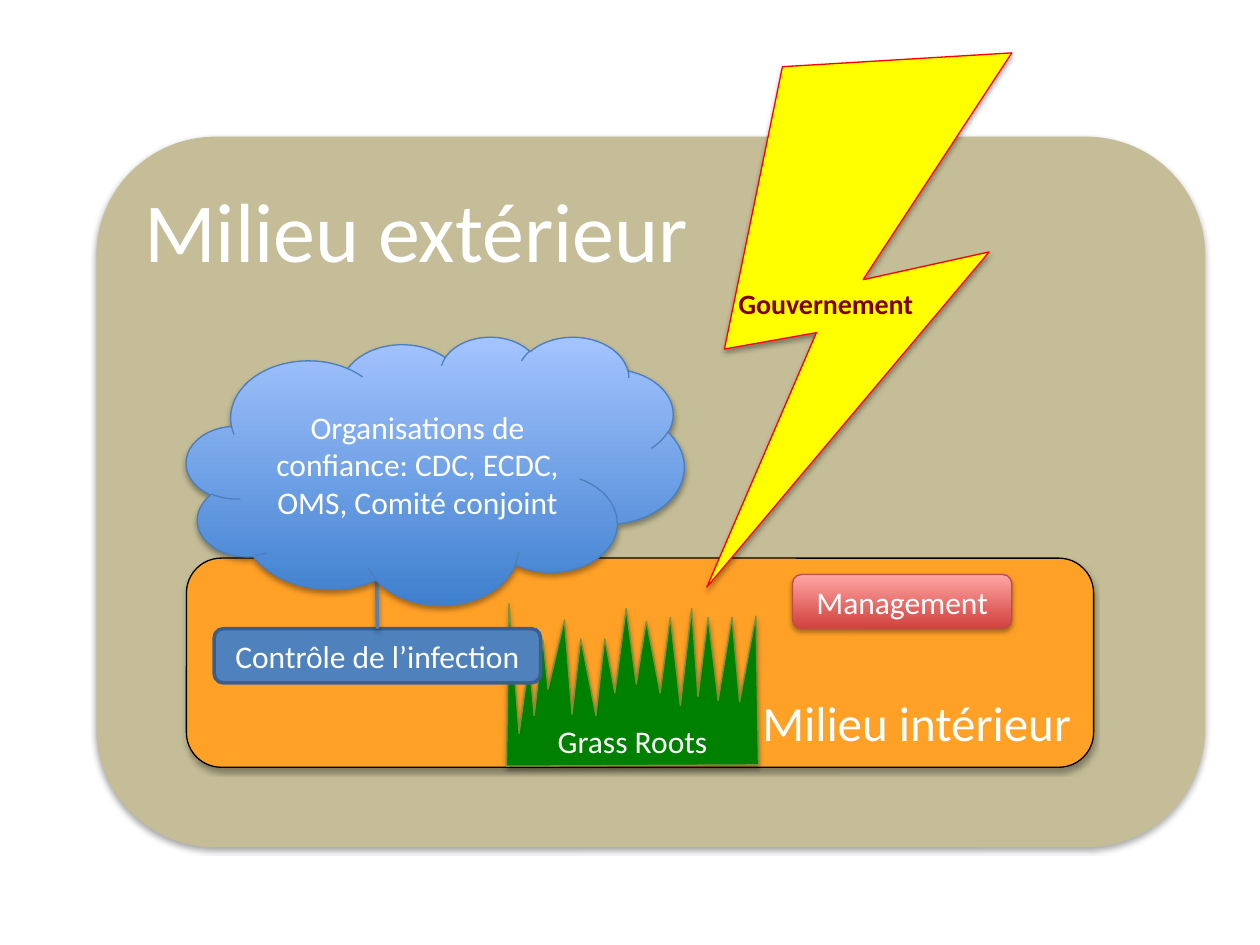
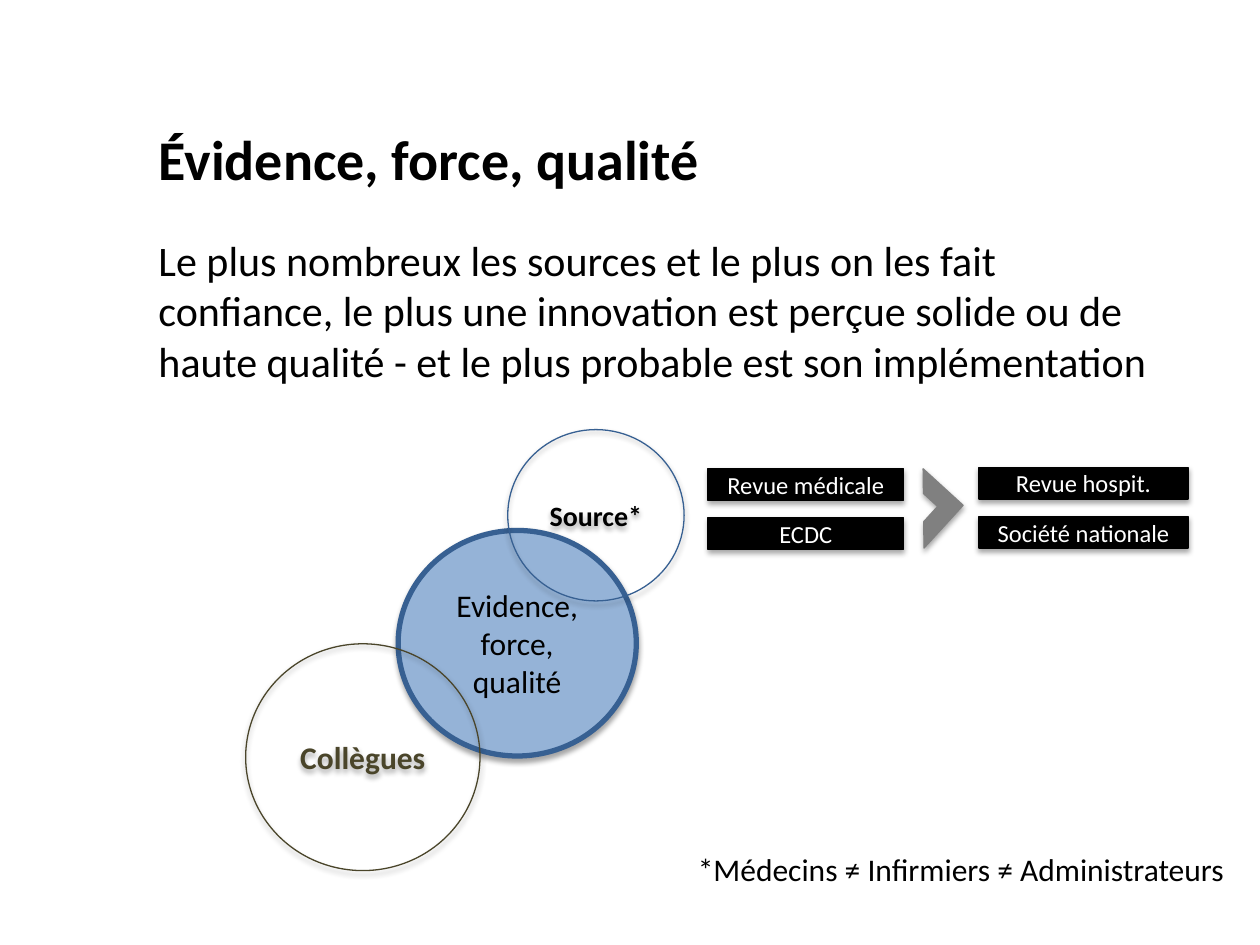
from lxml import etree
from pptx import Presentation
from pptx.dml.color import RGBColor
from pptx.enum.shapes import MSO_CONNECTOR, MSO_SHAPE
from pptx.enum.text import MSO_ANCHOR, MSO_AUTO_SIZE, PP_ALIGN
from pptx.oxml.ns import qn
from pptx.util import Inches, Pt

ROUND, RECT, CLOUD = MSO_SHAPE.ROUNDED_RECTANGLE, MSO_SHAPE.RECTANGLE, MSO_SHAPE.CLOUD
OVAL, HALF_FRAME = MSO_SHAPE.OVAL, MSO_SHAPE.HALF_FRAME
STRAIGHT = MSO_CONNECTOR.STRAIGHT
TOP, MIDDLE, BOTTOM = MSO_ANCHOR.TOP, MSO_ANCHOR.MIDDLE, MSO_ANCHOR.BOTTOM
LEFT, CENTER, RIGHT = PP_ALIGN.LEFT, PP_ALIGN.CENTER, PP_ALIGN.RIGHT
NO_AUTOSIZE = MSO_AUTO_SIZE.NONE
TITLE_ONLY, BLANK = 5, 6

COLORS = {
    "white": "FFFFFF", "black": "000000", "sand": "C4BD97", "orange": "FFA127",
    "grass": "008000", "grass_edge": "77933C", "blue": "4F81BD", "blue_edge": "3A5F8C",
    "cloud_dark": "3F80CE", "cloud_light": "A4C4FF", "cloud_edge": "4B7EBC",
    "yellow": "FFFF00", "red": "FF0000", "maroon": "800000",
    "rose_dark": "D1403C", "rose_light": "FFA6A5", "rose_edge": "BF4C48",
    "sky": "95B3D7", "navy": "376092", "olive": "4A452A", "gray": "808080",
}

GRASS = [
    (4.02, 6.08), (4.04, 4.79), (4.12, 5.82), (4.2, 5.25), (4.24, 5.68), (4.31, 5.08),
    (4.35, 5.47), (4.48, 4.92), (4.54, 5.67), (4.61, 5.07), (4.73, 5.68), (4.8, 5.07),
    (4.88, 5.5), (4.97, 4.83), (5.05, 5.43), (5.13, 4.93), (5.24, 5.5), (5.32, 4.9),
    (5.4, 5.6), (5.49, 4.83), (5.54, 5.53), (5.62, 4.9), (5.7, 5.56), (5.81, 4.9),
    (5.87, 5.57), (6, 4.89), (6.02, 6.07),
]
BOLT = [(6.21, 0.53), (8.03, 0.42), (6.85, 2.22), (7.85, 2), (5.61, 4.66),
        (6.48, 2.64), (5.75, 2.77)]


def rgb(name):
    return RGBColor.from_string(COLORS[name])


class Deck:
    font_name = "Calibri"

    def __init__(self):
        self.prs = Presentation()
        self.prs.slide_width, self.prs.slide_height = Inches(10), Inches(7.5)
        self.s = None

    def new_slide(self, layout):
        self.s = self.prs.slides.add_slide(self.prs.slide_layouts[layout])

    def set_text(self, sp, text, size=18, color="white", bold=False, align=CENTER,
                 anchor=MIDDLE, wrap=True):
        tf = sp.text_frame
        frame_format = {"auto_size": NO_AUTOSIZE, "word_wrap": wrap, "vertical_anchor": anchor}
        for key, value in frame_format.items():
            setattr(tf, key, value)
        p = tf.paragraphs[0]
        p.alignment = align
        r = p.add_run()
        r.text = text
        font_format = {"name": self.font_name, "size": Pt(size), "bold": bold}
        for key, value in font_format.items():
            setattr(r.font, key, value)
        r.font.color.rgb = rgb(color)

    def add_shadow(self, sp, dist=1.8, alpha=35):
        """Give the element a soft shadow that falls straight down."""
        sp_pr = sp._element.spPr
        effects = sp_pr.find(qn("a:effectLst"))
        if effects is None:
            effects = etree.SubElement(sp_pr, qn("a:effectLst"))
        shadow = etree.SubElement(effects, qn("a:outerShdw"), blurRad=str(Pt(3.1)),
                                  dist=str(Pt(dist)), dir="5400000", rotWithShape="0")
        color = etree.SubElement(shadow, qn("a:srgbClr"), val=COLORS["black"])
        etree.SubElement(color, qn("a:alpha"), val=str(alpha * 1000))

    def paint(self, sp, fill, line, width=0.75, shadow=True):
        """Fill with nothing, one colour, or a (bottom, top) gradient; then outline."""
        if fill is None:
            sp.fill.background()
        elif isinstance(fill, tuple):
            sp.fill.gradient()
            sp.fill.gradient_angle = 90
            for stop, name in zip(sp.fill.gradient_stops, fill):
                stop.color.rgb = rgb(name)
        else:
            sp.fill.solid()
            sp.fill.fore_color.rgb = rgb(fill)
        sp.line.color.rgb = rgb(line)
        sp.line.width = Pt(width)
        sp.shadow.inherit = False
        if shadow:
            self.add_shadow(sp)

    def shape(self, kind, box, fill, line, text=None, width=0.75, shadow=True, **style):
        sp = self.s.shapes.add_shape(kind, *map(Inches, box))
        self.paint(sp, fill, line, width, shadow)
        if text:
            self.set_text(sp, text, **style)
        return sp

    def outline(self, points, fill, line, text, **style):
        start, *rest = [(Inches(x), Inches(y)) for x, y in points]
        builder = self.s.shapes.build_freeform(*start)
        builder.add_line_segments(rest, close=True)
        sp = builder.convert_to_shape()
        self.paint(sp, fill, line)
        self.set_text(sp, text, **style)
        return sp

    def stem(self, x, y, target, color):
        """Draw a line from a point down to the top of the target."""
        cn = self.s.shapes.add_connector(STRAIGHT, Inches(x), Inches(y), Inches(x), target.top)
        cn.end_connect(target, 0)
        cn.line.color.rgb = rgb(color)
        cn.line.width = Pt(2)
        self.add_shadow(cn, dist=1.6, alpha=38)

    def title(self, text, box):
        sp = self.s.shapes.title
        for key, value in zip(("left", "top", "width", "height"), box):
            setattr(sp, key, Inches(value))
        self.set_text(sp, text, size=32, color="black", bold=True, align=LEFT, anchor=TOP)

    def text(self, text, box, size, wrap=True):
        sp = self.s.shapes.add_textbox(*map(Inches, box))
        self.set_text(sp, text, size, "black", align=LEFT, anchor=TOP, wrap=wrap)


def build_environment(deck):
    deck.new_slide(BLANK)
    deck.shape(ROUND, (0.77, 1.09, 8.79, 5.63), "sand", "sand", "Milieu extérieur",
               size=48, align=LEFT, anchor=TOP)
    deck.shape(ROUND, (1.48, 4.43, 7.2, 1.66), "orange", "black", "Milieu intérieur",
               size=28, align=RIGHT, anchor=BOTTOM)
    deck.outline(GRASS, "grass", "grass_edge", "Grass Roots", anchor=BOTTOM)
    control = deck.shape(ROUND, (1.7, 4.99, 2.59, 0.43), "blue", "blue_edge",
                         "Contrôle de l’infection", width=2, shadow=False)
    deck.stem(2.99, 4.56, control, "blue")
    deck.shape(CLOUD, (1.48, 2.67, 3.95, 2.13), ("cloud_dark", "cloud_light"), "cloud_edge",
               "Organisations de confiance: CDC, ECDC, OMS, Comité conjoint")
    bolt = deck.outline(BOLT, "yellow", "red", "Gouvernement", size=16, color="maroon",
                        bold=True, align=LEFT)
    bolt.text_frame.margin_left = Inches(0.25)
    bolt.text_frame.margin_bottom = Inches(0.32)
    deck.shape(ROUND, (6.29, 4.56, 1.74, 0.43), ("rose_dark", "rose_light"), "rose_edge",
               "Management")


def build_evidence(deck):
    deck.new_slide(TITLE_ONLY)
    deck.title("Évidence, force, qualité", (1.16, 0.94, 7.06, 0.64))
    deck.text("Le plus nombreux les sources et le plus on les fait confiance, le plus une "
              "innovation est perçue solide ou de haute qualité - et le plus probable est "
              "son implémentation", (1.16, 1.81, 8.27, 1.31), 24)

    source_columns = [
        (5.62, 3.72, 1.55, ("Revue médicale", "ECDC")),
        (7.77, 3.71, 1.66, ("Revue hospit.", "Société nationale")),
    ]
    for x, y, width, names in source_columns:
        for row, name in enumerate(names):
            deck.shape(RECT, (x, y + 0.39 * row, width, 0.25), "black", "black", name, size=14)

    deck.shape(OVAL, (3.16, 4.21, 1.89, 1.79), "sky", "navy", "Evidence, force, qualité",
               width=3, color="black")
    deck.shape(OVAL, (4.03, 3.41, 1.4, 1.36), None, "navy", "Source*",
               size=16, color="black", bold=True)
    deck.shape(OVAL, (1.95, 5.11, 1.86, 1.8), None, "olive", "Collègues",
               color="olive", bold=True)
    chevron = deck.shape(HALF_FRAME, (7.1, 3.82, 0.46, 0.43), "gray", "gray")
    chevron.rotation = 132.4
    deck.text("*Médecins ≠ Infirmiers ≠ Administrateurs", (5.44, 6.7, 4.43, 0.4), 18, wrap=False)


def main():
    deck = Deck()
    build_environment(deck)
    build_evidence(deck)
    deck.prs.save("out.pptx")


if __name__ == "__main__":
    main()
